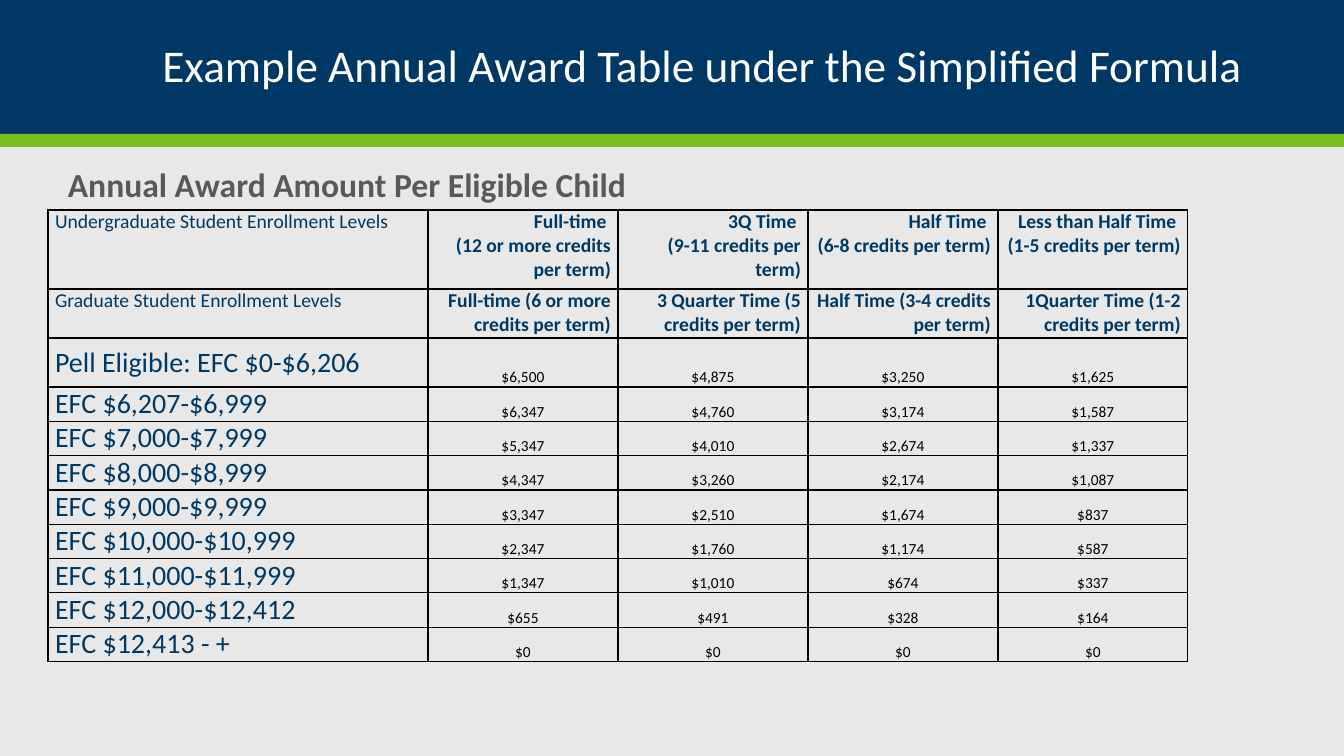
"""Build the slide with the annual award table under the simplified formula."""
from lxml.etree import SubElement
from pptx import Presentation
from pptx.dml.color import RGBColor
from pptx.enum.shapes import MSO_SHAPE as Shape
from pptx.enum.text import MSO_ANCHOR as Anchor, PP_ALIGN as Align
from pptx.oxml.ns import qn
from pptx.util import Pt

PX = 914400 / 100.8
COLORS = {"page": "E8E8E8", "navy": "003865", "green": "78BE21",
          "white": "FFFFFF", "gray": "58595B", "black": "000000"}


def px(*lengths):
    return [round(length * PX) for length in lengths]


def write(frame, text, size, color, bold=False, align=Align.LEFT, spacing=None):
    frame.word_wrap = True
    frame.text = text
    for paragraph in frame.paragraphs:
        paragraph.alignment = align
        paragraph.line_spacing = spacing
        for run in paragraph.runs:
            run.font.name = "Calibri"
            run.font.size = Pt(size)
            run.font.bold = bold
            run.font.color.rgb = RGBColor.from_string(COLORS[color])


prs = Presentation()
prs.slide_width, prs.slide_height = px(1344, 756)
slide = prs.slides.add_slide(prs.slide_layouts[5])
slide.background.fill.solid()
slide.background.fill.fore_color.rgb = RGBColor.from_string(COLORS["page"])

title = slide.shapes.title
title.left, title.top, title.width, title.height = px(92, 17, 1160, 101)
title.text_frame.vertical_anchor = Anchor.MIDDLE
write(title.text_frame, "Example Annual Award Table under the Simplified Formula",
      32.4, "white", align=Align.RIGHT, spacing=0.9)

for top, height, color in [(0, 134, "navy"), (134, 13, "green")]:
    band = slide.shapes.add_shape(Shape.RECTANGLE, *px(0, top, 1344, height))
    band.shadow.inherit = False
    band.fill.solid()
    band.fill.fore_color.rgb = RGBColor.from_string(COLORS[color])
    band.line.fill.background()
    title.element.addprevious(band.element)

HEADERS = [
    ["Undergraduate Student Enrollment Levels",
     "Full-time \n(12 or more credits per term)",
     "3Q Time \n(9-11 credits per term)",
     "Half Time \n(6-8 credits per term)",
     "Less than Half Time \n(1-5 credits per term)"],
    ["Graduate Student Enrollment Levels",
     "Full-time (6 or more credits per term)",
     "3 Quarter Time (5 credits per term)",
     "Half Time (3-4 credits per term)",
     "1Quarter Time (1-2 credits per term)"],
]
AWARDS = [
    ["Pell Eligible: EFC $0-$6,206", 6500, 4875, 3250, 1625],
    ["EFC $6,207-$6,999", 6347, 4760, 3174, 1587],
    ["EFC $7,000-$7,999", 5347, 4010, 2674, 1337],
    ["EFC $8,000-$8,999", 4347, 3260, 2174, 1087],
    ["EFC $9,000-$9,999", 3347, 2510, 1674, 837],
    ["EFC $10,000-$10,999", 2347, 1760, 1174, 587],
    ["EFC $11,000-$11,999", 1347, 1010, 674, 337],
    ["EFC $12,000-$12,412", 655, 491, 328, 164],
    ["EFC $12,413 - +", 0, 0, 0, 0],
]
COLUMN_WIDTHS = [380] + [190] * 4
ROW_HEIGHTS = [79, 49, 49] + [32] * 8

awards = slide.shapes.add_table(
    len(ROW_HEIGHTS), len(COLUMN_WIDTHS),
    *px(48, 210, sum(COLUMN_WIDTHS), sum(ROW_HEIGHTS))).table
awards.first_row = awards.horz_banding = False
for column, width in zip(awards.columns, px(*COLUMN_WIDTHS)):
    column.width = width
for row, height in zip(awards.rows, px(*ROW_HEIGHTS)):
    row.height = height

for r, entries in enumerate(HEADERS + AWARDS):
    is_header = r < len(HEADERS)
    for c, entry in enumerate(entries):
        cell = awards.cell(r, c)
        is_amount = c > 0 and not is_header
        side, top = px(1, 1) if is_amount else px(7, 0)
        cell.margin_left = cell.margin_right = side
        cell.margin_top, cell.margin_bottom = top, 0
        if is_amount:
            cell.vertical_anchor = Anchor.BOTTOM
            write(cell.text_frame, f"${entry:,}", 11, "black", align=Align.CENTER)
        elif is_header:
            write(cell.text_frame, entry, 14, "navy", bold=c > 0,
                  align=Align.RIGHT if c else Align.LEFT)
        else:
            write(cell.text_frame, entry, 20, "navy")
        properties = cell._tc.get_or_add_tcPr()
        for edge in ("a:lnL", "a:lnR", "a:lnT", "a:lnB"):
            border = SubElement(properties, qn(edge), w=str(Pt(1)))
            fill = SubElement(border, qn("a:solidFill"))
            SubElement(fill, qn("a:srgbClr"), val=COLORS["black"])
        cell.fill.background()
awards.cell(len(HEADERS), 0).vertical_anchor = Anchor.MIDDLE

subtitle = slide.shapes.add_textbox(*px(58, 159, 1218, 50))
write(subtitle.text_frame, "Annual Award Amount Per Eligible Child", 24, "gray", bold=True)

prs.save("out.pptx")
